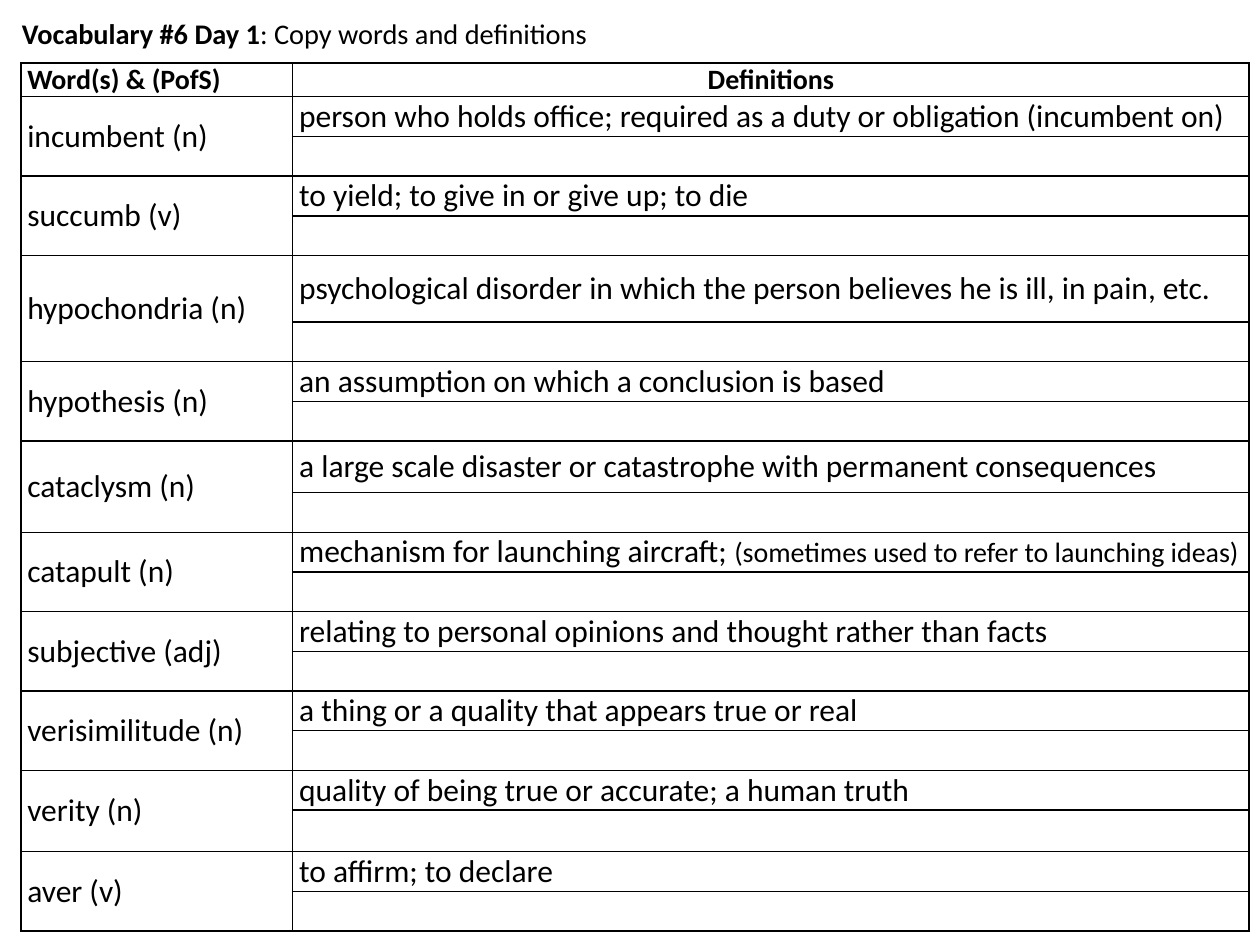
"""Build a vocabulary slide: a heading above a table of words and definitions."""
from lxml import etree
from pptx import Presentation
from pptx.dml.color import RGBColor
from pptx.enum.text import MSO_ANCHOR, PP_ALIGN
from pptx.oxml.ns import qn
from pptx.util import Cm, Pt

MIDDLE = MSO_ANCHOR.MIDDLE
LEFT, CENTER = PP_ALIGN.LEFT, PP_ALIGN.CENTER
COLORS = {"ink": "000000", "paper": "FFFFFF"}
FONT = "Calibri"
HEADING = [("Vocabulary #6 Day 1", 16.2, True), (": Copy words and definitions", 16.2, False)]
HEADERS = [("Word(s) & (PofS)", LEFT), ("Definitions", CENTER)]
LINE = 0.8
ENTRIES = [
    ("incumbent (n)", "person who holds office; required as a duty or obligation (incumbent on)"),
    ("succumb (v)", "to yield; to give in or give up; to die"),
    ("hypochondria (n)", "psychological disorder in which the person believes he is ill, in pain, etc."),
    ("hypothesis (n)", "an assumption on which a conclusion is based"),
    ("cataclysm (n)", "a large scale disaster or catastrophe with permanent consequences"),
    ("catapult (n)", "mechanism for launching aircraft; "),
    ("subjective (adj)", "relating to personal opinions and thought rather than facts"),
    ("verisimilitude (n)", "a thing or a quality that appears true or real"),
    ("verity (n)", "quality of being true or accurate; a human truth"),
    ("aver (v)", "to affirm; to declare"),
]
ASIDES = {"catapult (n)": "(sometimes used to refer to launching ideas)"}
HEADER_HEIGHT = 0.68
ENTRY_HEIGHTS = {"hypochondria (n)": (1.34, LINE), "cataclysm (n)": (1.04, LINE), "verity (n)": (LINE, 0.84)}
COLUMN_WIDTHS = [5.48, 19.28]


def write(frame, runs, align=LEFT):
    paragraph = frame.paragraphs[0]
    paragraph.alignment = align
    for text, size, bold in runs:
        run = paragraph.add_run()
        run.text = text
        run.font.name = FONT
        run.font.size = Pt(size)
        run.font.bold = bold
        run.font.color.rgb = RGBColor.from_string(COLORS["ink"])


def style(cell):
    cell.margin_left = cell.margin_right = Cm(0.13)
    cell.margin_top = cell.margin_bottom = 0
    cell.vertical_anchor = MIDDLE
    properties = cell._tc.get_or_add_tcPr()
    for side in ("a:lnL", "a:lnR", "a:lnT", "a:lnB"):
        border = etree.SubElement(properties, qn(side), w=str(Pt(1)))
        ink = etree.SubElement(border, qn("a:solidFill"))
        etree.SubElement(ink, qn("a:srgbClr"), val=COLORS["ink"])
    cell.fill.solid()
    cell.fill.fore_color.rgb = RGBColor.from_string(COLORS["paper"])


def main():
    presentation = Presentation()
    presentation.slide_width, presentation.slide_height = Cm(25.4), Cm(19.05)
    slide = presentation.slides.add_slide(presentation.slide_layouts[6])

    heading = slide.shapes.add_textbox(0, 0, Cm(12.27), Cm(1.35)).text_frame
    heading.word_wrap = True
    heading.vertical_anchor = MIDDLE
    write(heading, HEADING, CENTER)

    heights = [HEADER_HEIGHT]
    for word, _ in ENTRIES:
        heights.extend(ENTRY_HEIGHTS.get(word, (LINE, LINE)))
    vocabulary = slide.shapes.add_table(
        len(heights), len(COLUMN_WIDTHS), Cm(0.42), Cm(1.27),
        Cm(sum(COLUMN_WIDTHS)), Cm(sum(heights))).table
    vocabulary.first_row = vocabulary.horz_banding = False
    for column, width in zip(vocabulary.columns, COLUMN_WIDTHS):
        column.width = Cm(width)
    for row, height in zip(vocabulary.rows, heights):
        row.height = Cm(height)
    for cell in vocabulary.iter_cells():
        style(cell)

    for column, (label, align) in enumerate(HEADERS):
        write(vocabulary.cell(0, column).text_frame, [(label, 16, True)], align)
    for index, (word, definition) in enumerate(ENTRIES):
        top = 1 + 2 * index
        word_cell = vocabulary.cell(top, 0)
        word_cell.merge(vocabulary.cell(top + 1, 0))
        write(word_cell.text_frame, [(word, 18, False)])
        meaning = [(definition, 18, False)]
        if word in ASIDES:
            meaning.append((ASIDES[word], 16, False))
        write(vocabulary.cell(top, 1).text_frame, meaning)

    presentation.save("out.pptx")


if __name__ == "__main__":
    main()
